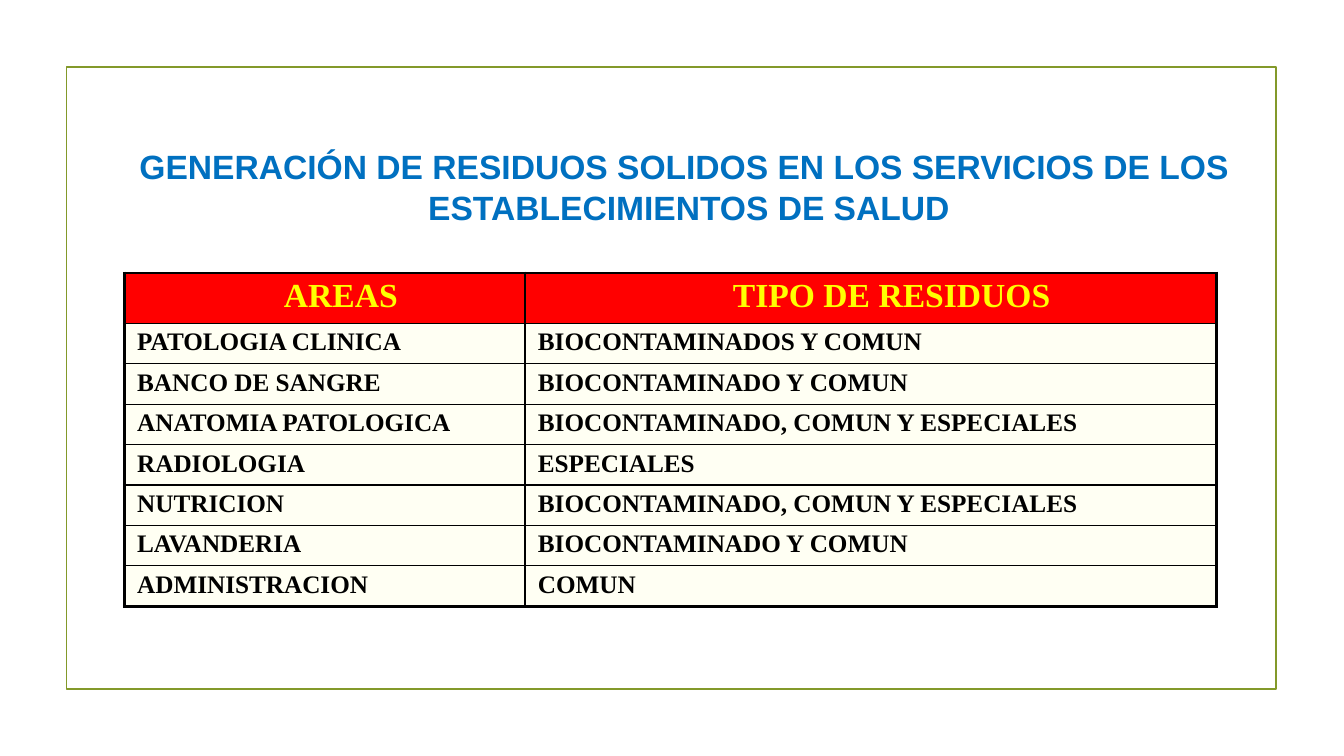
from lxml.etree import SubElement
from pptx import Presentation
from pptx.dml.color import RGBColor
from pptx.enum.shapes import MSO_SHAPE as Shape
from pptx.enum.text import MSO_ANCHOR as Anchor, PP_ALIGN as Align
from pptx.oxml.ns import qn
from pptx.util import Pt

OLIVE = RGBColor(0x83, 0x99, 0x2A)
BLUE = RGBColor(0x00, 0x70, 0xC0)
RED = RGBColor(0xFF, 0x00, 0x00)
YELLOW = RGBColor(0xFF, 0xFF, 0x00)
IVORY = RGBColor(0xFF, 0xFF, 0xF3)
BLACK = RGBColor(0x00, 0x00, 0x00)

TITLE = [
    "GENERACIÓN DE RESIDUOS SOLIDOS EN LOS SERVICIOS DE LOS",
    " ESTABLECIMIENTOS DE SALUD",
]
ROWS = [
    ("AREAS", "TIPO DE RESIDUOS"),
    ("PATOLOGIA CLINICA", "BIOCONTAMINADOS Y COMUN"),
    ("BANCO DE SANGRE", "BIOCONTAMINADO Y COMUN"),
    ("ANATOMIA PATOLOGICA", "BIOCONTAMINADO, COMUN Y ESPECIALES"),
    ("RADIOLOGIA", "ESPECIALES"),
    ("NUTRICION", "BIOCONTAMINADO, COMUN Y ESPECIALES"),
    ("LAVANDERIA", "BIOCONTAMINADO Y COMUN"),
    ("ADMINISTRACION", "COMUN"),
]
FIRST_COLUMN_SHARE = 0.367
HEADER_HEIGHT = 36
HEADER_INDENTS = (23, 30)
CELL_MARGIN = 9.2
OUTER_LINE, INNER_LINE = 2.25, 1


def style_paragraph(paragraph, font_name, size, color, alignment):
    paragraph.alignment = alignment
    for run in paragraph.runs:
        run.font.name = font_name
        run.font.size = Pt(size)
        run.font.bold = True
        run.font.color.rgb = color


def add_frame(slide, left, top, width, height):
    frame = slide.shapes.add_shape(
        Shape.RECTANGLE, Pt(left), Pt(top), Pt(width), Pt(height))
    frame.shadow.inherit = False
    frame.fill.background()
    frame.line.color.rgb = OLIVE
    frame.line.width = Pt(1.25)


def add_title(slide, left, top, width, height):
    box = slide.shapes.add_textbox(Pt(left), Pt(top), Pt(width), Pt(height))
    text_frame = box.text_frame
    text_frame.word_wrap = True
    text_frame.text = "\n".join(TITLE)
    for paragraph in text_frame.paragraphs:
        style_paragraph(paragraph, "Arial", 24, BLUE, Align.CENTER)


def set_borders(cell, widths):
    properties = cell._tc.get_or_add_tcPr()
    for position, (side, width) in enumerate(widths.items()):
        line = SubElement(properties, qn(f"a:{side}"), w=str(Pt(width)))
        properties.remove(line)
        properties.insert(position, line)
        fill = SubElement(line, qn("a:solidFill"))
        SubElement(fill, qn("a:srgbClr"), val=str(BLACK))


def format_cell(cell, text, is_header, indent):
    cell.text = text
    cell.vertical_anchor = Anchor.TOP
    cell.margin_left = Pt(CELL_MARGIN + indent)
    cell.margin_right = Pt(CELL_MARGIN)
    cell.margin_top = cell.margin_bottom = Pt(3.6)
    cell.fill.solid()
    cell.fill.fore_color.rgb = RED if is_header else IVORY
    style_paragraph(
        cell.text_frame.paragraphs[0], "Times New Roman",
        24 if is_header else 18,
        YELLOW if is_header else BLACK,
        Align.CENTER if is_header else Align.LEFT)


def add_waste_table(slide, left, top, width, height):
    last_row, last_column = len(ROWS) - 1, len(ROWS[0]) - 1
    table = slide.shapes.add_table(
        len(ROWS), len(ROWS[0]), Pt(left), Pt(top), Pt(width), Pt(height)).table
    first_width = width * FIRST_COLUMN_SHARE
    table.columns[0].width = Pt(first_width)
    table.columns[1].width = Pt(width - first_width)
    for row_index, texts in enumerate(ROWS):
        is_header = row_index == 0
        body_height = (height - HEADER_HEIGHT) / last_row
        table.rows[row_index].height = Pt(HEADER_HEIGHT if is_header else body_height)
        for column_index, text in enumerate(texts):
            cell = table.cell(row_index, column_index)
            indent = HEADER_INDENTS[column_index] if is_header else 0
            format_cell(cell, text, is_header, indent)
            on_edge = {
                "lnL": column_index == 0,
                "lnR": column_index == last_column,
                "lnT": is_header,
                "lnB": row_index == last_row,
            }
            set_borders(cell, {side: OUTER_LINE if outer else INNER_LINE
                               for side, outer in on_edge.items()})


def main():
    presentation = Presentation()
    presentation.slide_width, presentation.slide_height = Pt(960), Pt(540)
    slide = presentation.slides.add_slide(presentation.slide_layouts[6])
    add_frame(slide, 47.5, 48, 864, 444)
    add_waste_table(slide, 88.8, 195, 780, 238)
    add_title(slide, 88.8, 101, 800, 65.5)
    presentation.save("out.pptx")


if __name__ == "__main__":
    main()
